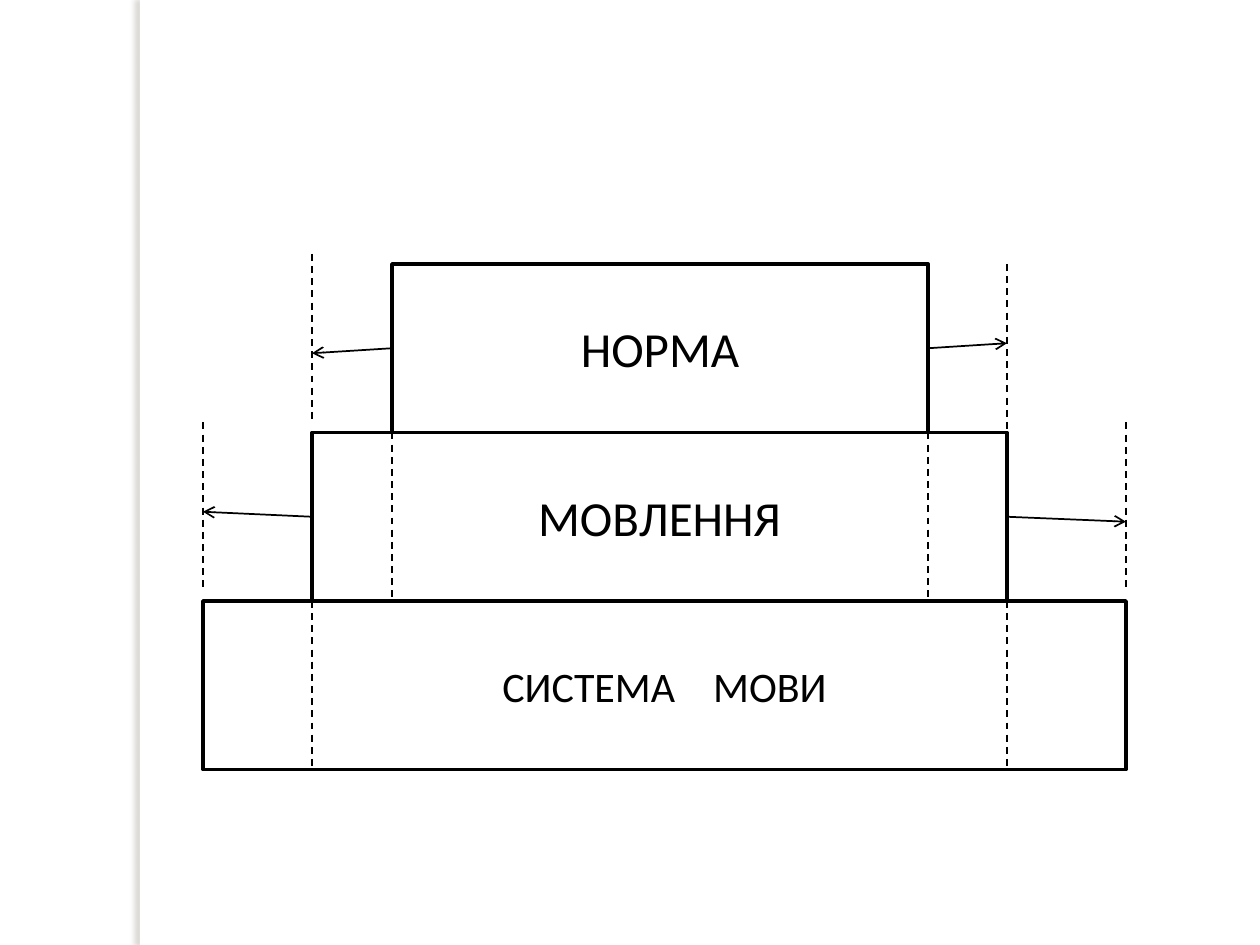
from lxml.etree import SubElement
from pptx import Presentation
from pptx.dml.color import RGBColor
from pptx.enum.dml import MSO_LINE
from pptx.enum.shapes import MSO_CONNECTOR, MSO_SHAPE
from pptx.enum.text import MSO_ANCHOR, PP_ALIGN
from pptx.oxml.ns import qn
from pptx.util import Pt

SCALE = 914400 / 126  # EMU per px
BLACK = RGBColor(0x00, 0x00, 0x00)
WHITE = RGBColor(0xFF, 0xFF, 0xFF)
SHADOW = RGBColor(0x73, 0x6F, 0x63)

SLIDE_WIDTH, SLIDE_HEIGHT = 1260, 945
TIER_TOP, TIER_HEIGHT = 264, 168.5

# Tiers from top to bottom: words, left, right, text size
TIERS = [
    (["НОРМА"], 392, 928, 28),
    (["МОВЛЕННЯ"], 312, 1007, 28),
    (["СИСТЕМА", "МОВИ"], 203, 1126, 24),
]
# For each upper tier and side: rise of the outer guide, drop of the arrow tip
SIDES = [
    [(10, 5), (0, -5)],
    [(10, -5), (10, 5)],
]


def px(value):
    return round(value * SCALE)


def add_box(slide, left, top, width, height):
    shape = slide.shapes.add_shape(
        MSO_SHAPE.RECTANGLE, px(left), px(top), px(width), px(height))
    shape.shadow.inherit = False
    return shape


def add_side_strip(slide, left, top, width, height):
    """White strip that casts a soft shadow to the left."""
    strip = add_box(slide, left, top, width, height)
    strip.fill.solid()
    strip.fill.fore_color.rgb = WHITE
    strip.line.fill.background()
    effects = strip._element.spPr.find(qn("a:effectLst"))
    shadow = SubElement(effects, qn("a:outerShdw"), blurRad=str(Pt(3)),
                        dist=str(Pt(3)), dir="10800000", rotWithShape="0")
    color = SubElement(shadow, qn("a:srgbClr"), val=str(SHADOW))
    SubElement(color, qn("a:alpha"), val="25000")


def add_run(paragraph, text, size):
    run = paragraph.add_run()
    run.text = text
    style = {"name": "Calibri", "size": Pt(size)}
    for name, value in style.items():
        setattr(run.font, name, value)
    run.font.color.rgb = BLACK
    return run


def add_tier(slide, words, left, top, width, height, size):
    box = add_box(slide, left, top, width, height)
    box.fill.background()
    box.line.color.rgb = BLACK
    box.line.width = Pt(2)
    box.text_frame.vertical_anchor = MSO_ANCHOR.MIDDLE
    paragraph = box.text_frame.paragraphs[0]
    paragraph.alignment = PP_ALIGN.CENTER
    for index, word in enumerate(words):
        if index:
            # Wide gap between words through character spacing
            gap = add_run(paragraph, " ", size)
            gap.font._element.set("spc", "1630")
        add_run(paragraph, word, size)


def add_line(slide, start, end, dashed=False, arrow=False):
    line = slide.shapes.add_connector(
        MSO_CONNECTOR.STRAIGHT, *map(px, (*start, *end)))
    line.line.color.rgb = BLACK
    line.line.width = Pt(1)
    if dashed:
        line.line.dash_style = MSO_LINE.DASH
    if arrow:
        SubElement(line.line._get_or_add_ln(), qn("a:tailEnd"), type="arrow")
    SubElement(line._element.spPr, qn("a:effectLst"))


def add_pyramid(slide, top, height):
    tops = [top + index * height for index in range(len(TIERS))]

    # Boxes, widest at the back
    for (words, left, right, size), y in reversed(list(zip(TIERS, tops))):
        add_tier(slide, words, left, y, right - left, height, size)

    # Dashed guides and arrows at both sides of each upper tier
    for index, sides in enumerate(SIDES):
        y = tops[index]
        inner_edges = TIERS[index][1:3]
        outer_edges = TIERS[index + 1][1:3]
        for inner, outer, (rise, drop) in zip(inner_edges, outer_edges, sides):
            add_line(slide, (inner, y + height), (inner, y + 2 * height),
                     dashed=True)
            add_line(slide, (outer, y - rise), (outer, y - rise + height),
                     dashed=True)
            middle = y + height / 2
            add_line(slide, (inner, middle), (outer, middle + drop), arrow=True)


def main():
    presentation = Presentation()
    presentation.slide_width = px(SLIDE_WIDTH)
    presentation.slide_height = px(SLIDE_HEIGHT)
    slide = presentation.slides.add_slide(presentation.slide_layouts[6])
    slide.background.fill.solid()
    slide.background.fill.fore_color.rgb = WHITE
    add_side_strip(slide, 140, 0, 10, SLIDE_HEIGHT)
    add_pyramid(slide, TIER_TOP, TIER_HEIGHT)
    presentation.save("out.pptx")


if __name__ == "__main__":
    main()
